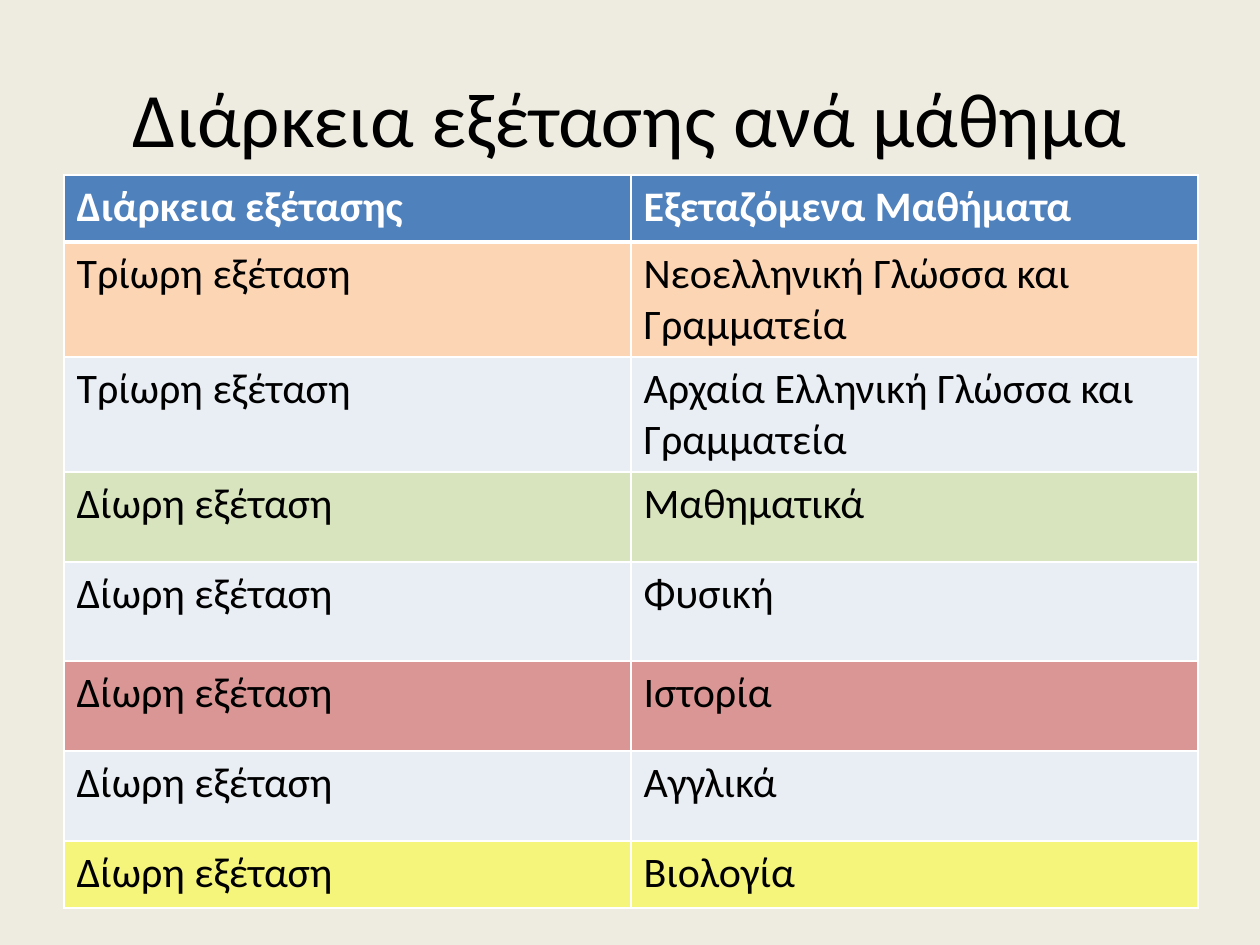
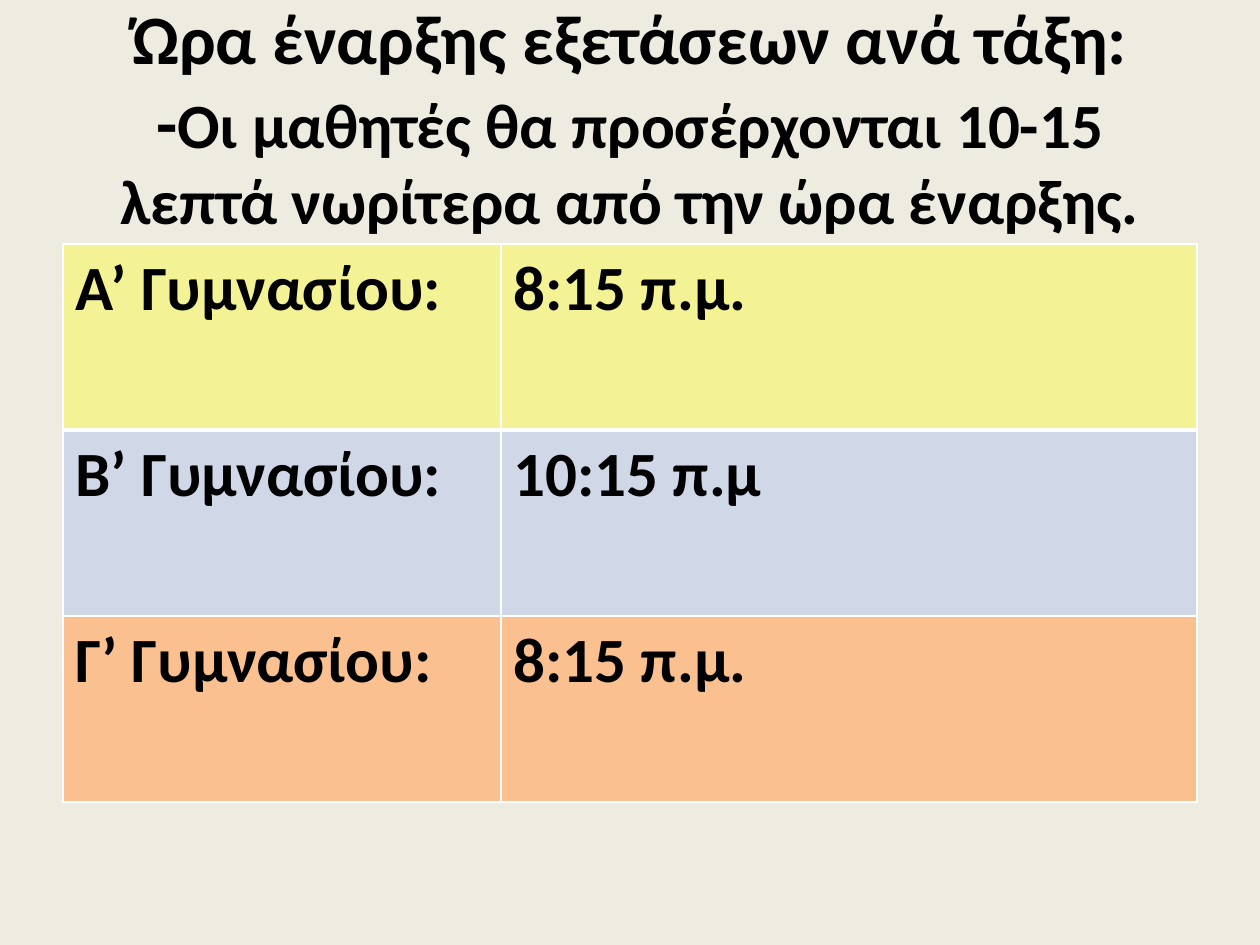
"""Builds two slides with the duration and the start time of school exams."""
import lxml.etree
import pptx
import pptx.dml.color
import pptx.enum.text
import pptx.oxml.ns
import pptx.util

EMU_PER_PX = 914400 / 126
COLOURS = {
    "background": "EEECE1",
    "text": "000000",
    "white": "FFFFFF",
    "header": "4F81BD",
    "pale": "E9EDF4",
    "blue": "D0D8E8",
    "peach": "FCD5B5",
    "orange": "FAC090",
    "green": "D7E4BD",
    "red": "D99694",
    "yellow": "FFFF00",
}
THREE_HOURS = "Τρίωρη εξέταση"
TWO_HOURS = "Δίωρη εξέταση"


def px(length):
    return pptx.util.Emu(round(length * EMU_PER_PX))


def colour(name):
    return pptx.dml.color.RGBColor.from_string(COLOURS[name])


def add_element(parent, tag, **attributes):
    return lxml.etree.SubElement(parent, pptx.oxml.ns.qn(tag), attributes)


class Deck:
    """Holds the shared style and the current slide."""

    def __init__(self):
        self.presentation = pptx.Presentation()
        self.presentation.slide_width = px(1260)
        self.presentation.slide_height = px(945)
        self.font_name = "Calibri"
        self.slide = None

    def add_slide(self):
        self.slide = self.presentation.slides.add_slide(self.presentation.slide_layouts[6])
        self.slide.background.fill.solid()
        self.slide.background.fill.fore_color.rgb = colour("background")

    def style(self, paragraph, bold, colour_name="text"):
        paragraph.font.name = self.font_name
        paragraph.font.bold = bold
        paragraph.font.color.rgb = colour(colour_name)

    def add_title(self, pieces, bold=False):
        shape = self.slide.shapes.add_textbox(px(63), px(38), px(1134), px(157))
        frame = shape.text_frame
        frame.word_wrap = True
        frame.vertical_anchor = pptx.enum.text.MSO_ANCHOR.MIDDLE
        paragraph = frame.paragraphs[0]
        paragraph.alignment = pptx.enum.text.PP_ALIGN.CENTER
        self.style(paragraph, bold)
        for index, (text, size) in enumerate(pieces):
            if index == 1:
                paragraph.add_line_break()
            run = paragraph.add_run()
            run.text = text
            run.font.size = pptx.util.Pt(size)

    def add_table(self, left, top, widths, heights, rows, size, bold=False, header=False):
        """Draws rows given as (texts, fill name, opacity in percent)."""
        shape = self.slide.shapes.add_table(
            len(rows), len(widths), px(left), px(top), px(sum(widths)), px(sum(heights)))
        table = shape.table
        table.first_row = header
        table.horz_banding = False
        for column, width in zip(table.columns, widths):
            column.width = px(width)
        for index, (texts, fill_name, opacity) in enumerate(rows):
            table.rows[index].height = px(heights[index])
            is_header = header and index == 0
            for cell, text in zip(table.rows[index].cells, texts):
                cell.text = text
                paragraph = cell.text_frame.paragraphs[0]
                self.style(paragraph, bold or is_header, "white" if is_header else "text")
                paragraph.font.size = pptx.util.Pt(size)
                self.add_borders(cell, top=3 if index == 1 else 1, bottom=3 if index == 0 else 1)
                self.fill_cell(cell, fill_name, opacity)

    def add_borders(self, cell, top, bottom):
        properties = cell._tc.get_or_add_tcPr()
        for side, width in (("L", 1), ("R", 1), ("T", top), ("B", bottom)):
            line = add_element(properties, f"a:ln{side}", w=str(pptx.util.Pt(width)))
            fill = add_element(line, "a:solidFill")
            add_element(fill, "a:srgbClr", val=COLOURS["white"])

    def fill_cell(self, cell, fill_name, opacity):
        cell.fill.solid()
        cell.fill.fore_color.rgb = colour(fill_name)
        if opacity < 100:
            fill = cell._tc.tcPr.find(pptx.oxml.ns.qn("a:solidFill"))
            add_element(fill[0], "a:alpha", val=str(opacity * 1000))


def add_duration_slide(deck):
    deck.add_slide()
    deck.add_title([("Διάρκεια εξέτασης ανά μάθημα", 44)])
    rows = [
        (("Διάρκεια εξέτασης", "Εξεταζόμενα Μαθήματα"), "header", 100),
        ((THREE_HOURS, "Νεοελληνική Γλώσσα και Γραμματεία"), "peach", 100),
        ((THREE_HOURS, "Αρχαία Ελληνική Γλώσσα και Γραμματεία"), "pale", 100),
        ((TWO_HOURS, "Μαθηματικά"), "green", 100),
        ((TWO_HOURS, "Φυσική"), "pale", 100),
        ((TWO_HOURS, "Ιστορία"), "red", 100),
        ((TWO_HOURS, "Αγγλικά"), "pale", 100),
        ((TWO_HOURS, "Βιολογία"), "yellow", 45),
    ]
    heights = [67, 115, 115, 90, 99, 90, 90, 67]
    deck.add_table(64, 175, [567, 567], heights, rows, size=24, header=True)


def add_start_time_slide(deck):
    deck.add_slide()
    deck.add_title([
        ("Ώρα έναρξης εξετάσεων ανά τάξη:", 39.6),
        ("-", 39.6),
        ("Οι μαθητές θα προσέρχονται 10-15 λεπτά νωρίτερα από την ώρα έναρξης.", 36),
    ], bold=True)
    rows = [
        (("Α’ Γυμνασίου:", "8:15 π.μ."), "yellow", 34),
        (("Β’ Γυμνασίου:", "10:15 π.μ"), "blue", 100),
        (("Γ’ Γυμνασίου:", "8:15 π.μ."), "orange", 100),
    ]
    deck.add_table(63, 244, [438, 696], [186] * len(rows), rows, size=36, bold=True)


def main():
    deck = Deck()
    add_duration_slide(deck)
    add_start_time_slide(deck)
    deck.presentation.save("out.pptx")


if __name__ == "__main__":
    main()
